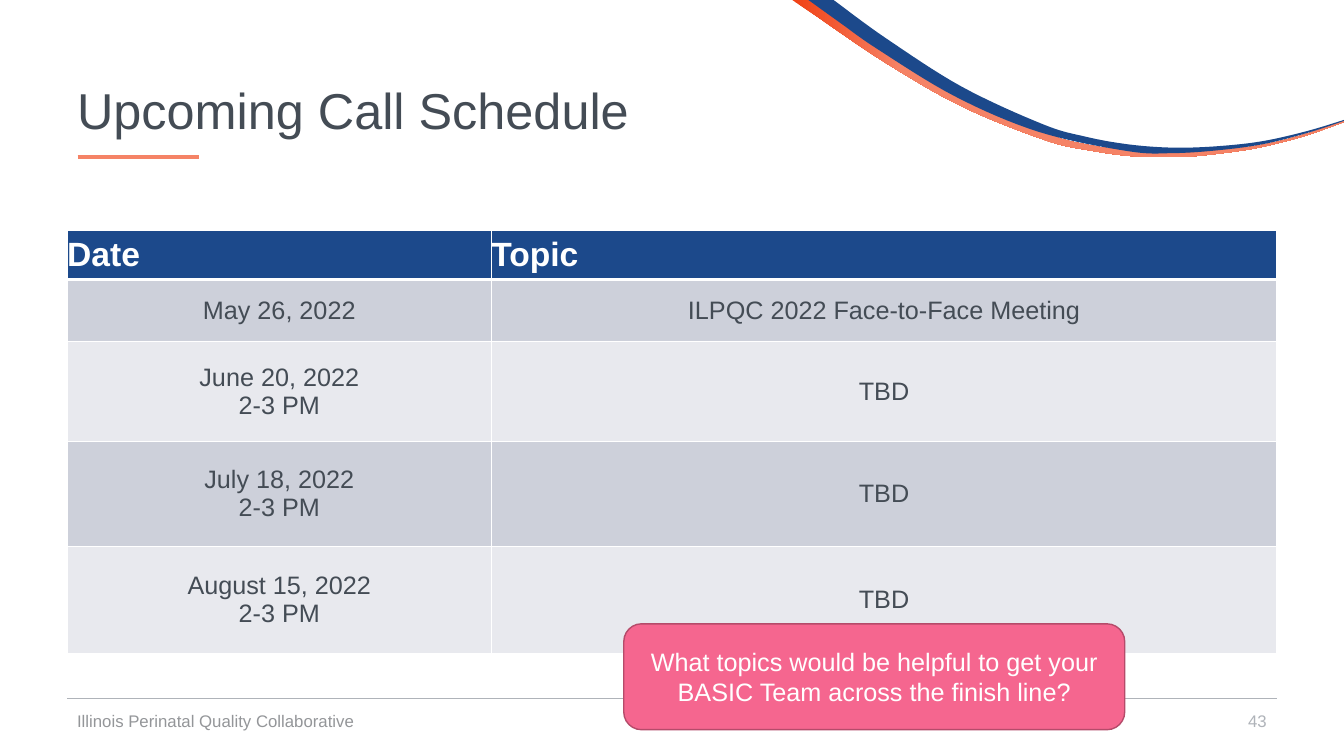
from dataclasses import dataclass

from lxml.etree import SubElement
from pptx import Presentation
from pptx.dml.color import RGBColor
from pptx.enum.shapes import MSO_CONNECTOR as Connector, MSO_SHAPE as Shape
from pptx.enum.text import MSO_ANCHOR as Anchor, PP_ALIGN as Align
from pptx.oxml.ns import qn
from pptx.util import Pt

COLORS = {
    "navy": "1C498B", "coral": "F58366", "orange": "F04115",
    "text": "444C55", "rule": "AFB3B9", "footer": "949699",
    "band_dark": "CDD0DA", "band_light": "E8E9EE", "white": "FFFFFF",
    "pink": "F5668F", "pink_edge": "B54B6A",
}
Points = list[tuple[float, float]]


@dataclass
class Ribbon:
    upper: Points
    lower: Points
    stops: list[tuple[float, str]]


@dataclass
class Rule:
    left: float
    right: float
    y: float
    color: str
    width: float


@dataclass
class Label:
    text: str
    box: tuple[float, float, float, float]
    size: float
    color: str
    align: Align = Align.LEFT
    spacing: float = 1.0


RIBBONS = [
    Ribbon(
        [(579.6, 0), (635, 38.9), (689.8, 71.3), (748.1, 95.8), (778.3, 103.7),
         (810, 108), (841, 109.4), (872.6, 107.3), (904.3, 103), (935.3, 95), (960, 86.4)],
        [(960, 87.1), (931.7, 97.2), (900.7, 105.1), (873.4, 109.4), (841.7, 112.3),
         (809.3, 111.6), (777.6, 107.3), (746.6, 100.1), (687.6, 76.3), (632.2, 44.6),
         (578.9, 8.6), (565.9, 0)],
        [(0, "orange"), (0.2, "coral")],
    ),
    Ribbon(
        [(595.4, 0), (632.9, 27.4), (686.9, 61.9), (744.5, 88.6), (775.2, 97.6),
         (806.4, 103.2), (838.5, 105.5), (870.5, 104.4), (902.2, 100.8), (933.8, 93.6),
         (960, 85.7)],
        [(960, 86.4), (933.8, 95), (902.2, 103), (870.5, 107.3), (838.1, 109.4),
         (805.7, 108), (742.3, 94.3), (682.6, 69.1), (627.1, 35.3), (600.5, 16.6),
         (577.4, 0)],
        [(0, "navy")],
    ),
]
RULES = [Rule(48, 912, 499, "rule", 0.5), Rule(55.5, 142, 112.2, "coral", 2.5)]
LABELS = [
    Label("Upcoming Call Schedule", (48, 28.8, 864, 104.4), 36, "text", spacing=0.9),
    Label("43", (696, 500.4, 216, 28.8), 12, "rule", Align.RIGHT),
    Label("Illinois Perinatal Quality Collaborative", (48, 500.4, 324, 28.8), 12, "footer"),
]
SCHEDULE = [
    ("Date", "Topic"),
    ("May 26, 2022", "ILPQC 2022 Face-to-Face Meeting"),
    ("June 20, 2022\n2-3 PM", "TBD"),
    ("July 18, 2022\n2-3 PM", "TBD"),
    ("August 15, 2022\n2-3 PM", "TBD"),
]
COLUMN_WIDTHS = [303, 561]
ROW_HEIGHTS = [35.2, 44.6, 71.3, 74.9, 76.3]


def rgb(name: str) -> RGBColor:
    return RGBColor.from_string(COLORS[name])


def write_text(frame, text: str, *, size: float, color: str, align=Align.LEFT,
               bold: bool = False, spacing: float = 1.0) -> None:
    frame.word_wrap = True
    frame.text = text
    for paragraph in frame.paragraphs:
        paragraph.alignment = align
        paragraph.line_spacing = spacing
        font = paragraph.runs[0].font
        font.name, font.size, font.bold = "Arial", Pt(size), bold
        font.color.rgb = rgb(color)


def smooth(knots: Points, steps: int = 8) -> Points:
    """Return points along a Catmull-Rom curve through the knots."""
    padded = [knots[0], *knots, knots[-1]]
    curve = [knots[0]]
    for a, b, c, d in zip(padded, padded[1:], padded[2:], padded[3:]):
        for step in range(1, steps + 1):
            t = step / steps
            curve.append(tuple(
                (2 * q + (r - p) * t + (2 * p - 5 * q + 4 * r - s) * t ** 2
                 + (3 * q - p - 3 * r + s) * t ** 3) / 2
                for p, q, r, s in zip(a, b, c, d)))
    return curve


def draw_ribbon(shapes, ribbon: Ribbon) -> None:
    outline = [(Pt(x), Pt(y)) for x, y in smooth(ribbon.upper) + smooth(ribbon.lower)]
    builder = shapes.build_freeform(*outline[0])
    builder.add_line_segments(outline[1:], close=True)
    band = builder.convert_to_shape()
    band.shadow.inherit = False
    band.line.fill.background()
    if len(ribbon.stops) == 1:
        band.fill.solid()
        band.fill.fore_color.rgb = rgb(ribbon.stops[0][1])
        return
    band.fill.gradient()
    band.fill.gradient_angle = 0
    for stop, (position, color) in zip(band.fill.gradient_stops, ribbon.stops):
        stop.position = position
        stop.color.rgb = rgb(color)


def draw_rule(shapes, rule: Rule) -> None:
    line = shapes.add_connector(Connector.STRAIGHT, Pt(rule.left), Pt(rule.y),
                                Pt(rule.right), Pt(rule.y))
    line.line.color.rgb = rgb(rule.color)
    line.line.width = Pt(rule.width)
    SubElement(line._element.spPr, qn("a:effectLst"))


def draw_label(shapes, label: Label) -> None:
    frame = shapes.add_textbox(*map(Pt, label.box)).text_frame
    frame.vertical_anchor = Anchor.MIDDLE
    write_text(frame, label.text, size=label.size, color=label.color,
               align=label.align, spacing=label.spacing)


def set_borders(cell, widths: dict[str, float]) -> None:
    properties = cell._tc.get_or_add_tcPr()
    for side, width in widths.items():
        border = SubElement(properties, qn(f"a:ln{side}"), w=str(Pt(width)))
        fill = SubElement(border, qn("a:solidFill"))
        SubElement(fill, qn("a:srgbClr"), val=COLORS["white"])


def draw_schedule(shapes) -> None:
    table = shapes.add_table(len(SCHEDULE), len(COLUMN_WIDTHS), Pt(48), Pt(164.4),
                             Pt(sum(COLUMN_WIDTHS)), Pt(sum(ROW_HEIGHTS))).table
    for column, width in zip(table.columns, COLUMN_WIDTHS):
        column.width = Pt(width)
    for index, (row, height, entries) in enumerate(zip(table.rows, ROW_HEIGHTS, SCHEDULE)):
        row.height = Pt(height)
        header = index == 0
        band = "navy" if header else ("band_light", "band_dark")[index % 2]
        for cell, entry in zip(row.cells, entries):
            cell.margin_left = cell.margin_right = cell.margin_top = cell.margin_bottom = 0
            cell.vertical_anchor = Anchor.MIDDLE
            set_borders(cell, {"L": 1, "R": 1, "T": 3 if index == 1 else 1,
                               "B": 3 if header else 1})
            cell.fill.solid()
            cell.fill.fore_color.rgb = rgb(band)
            write_text(cell.text_frame, entry, size=24 if header else 18, bold=header,
                       color="white" if header else "text",
                       align=Align.LEFT if header else Align.CENTER)


def draw_question(shapes) -> None:
    question = shapes.add_shape(Shape.ROUNDED_RECTANGLE, Pt(445.6), Pt(445.6),
                                Pt(357.8), Pt(75.6))
    question.shadow.inherit = False
    question.fill.solid()
    question.fill.fore_color.rgb = rgb("pink")
    question.line.color.rgb = rgb("pink_edge")
    question.line.width = Pt(1)
    question.text_frame.vertical_anchor = Anchor.MIDDLE
    write_text(question.text_frame,
               "What topics would be helpful to get your BASIC Team across the finish line?",
               size=18, color="white", align=Align.CENTER)


def main() -> None:
    deck = Presentation()
    deck.slide_width, deck.slide_height = Pt(960), Pt(540)
    shapes = deck.slides.add_slide(deck.slide_layouts[6]).shapes
    for ribbon in RIBBONS:
        draw_ribbon(shapes, ribbon)
    for rule in RULES:
        draw_rule(shapes, rule)
    for label in LABELS:
        draw_label(shapes, label)
    draw_schedule(shapes)
    draw_question(shapes)
    deck.save("out.pptx")


if __name__ == "__main__":
    main()
